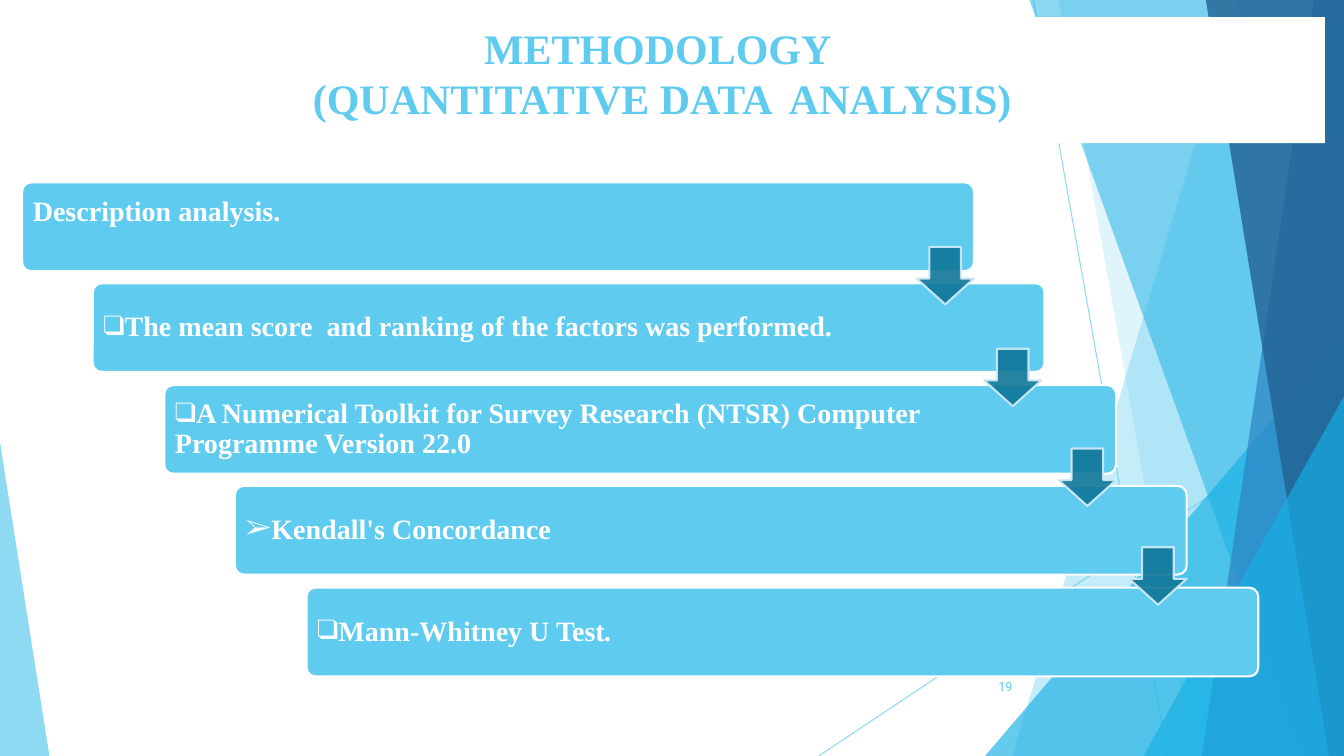
from dataclasses import dataclass

from pptx import Presentation
from pptx.dml.color import RGBColor
from pptx.enum.shapes import MSO_CONNECTOR as Link, MSO_SHAPE as Shape
from pptx.enum.text import MSO_ANCHOR as Anchor, MSO_AUTO_SIZE as Fit, PP_ALIGN as Align
from pptx.oxml.ns import qn
from pptx.oxml.xmlchemy import OxmlElement
from pptx.util import Pt

PX = 9144  # 100 px to the inch


@dataclass(frozen=True)
class Theme:
    sky: str = "5FCBEF"
    cyan: str = "17B0E4"
    blue: str = "2E83C3"
    navy: str = "226292"
    teal: str = "0F7698"
    pale: str = "D2ECF9"
    white: str = "FFFFFF"
    serif: str = "Times New Roman"
    sans: str = "Roboto"
    head: int = 30
    body: int = 20
    small: int = 9


T = Theme()

TITLE = ["METHODOLOGY ", "(QUANTITATIVE DATA  ANALYSIS)"]
STEPS = [  # bullet, runs as (text, italic)
    ("", [("Description analysis.", False)]),
    ("❑", [("The mean score  and ranking of the factors was performed.", False)]),
    ("❑", [("A Numerical Toolkit for Survey Research (NTSR) Computer "
            "Programme Version 22.0", False)]),
    ("➢", [("Kendall's Concordance", False)]),
    ("❑", [("Mann-Whitney U Test", False), (".", True)]),
]
ARROWS = [(909, 245), (976, 346), (1050, 445), (1120, 543)]
PAGE = "19"

RAYS = [(1025, 0, 1158, 750), (1333, 403, 812, 750)]
# Back to front: a list of corners, or a triangle's box with its apex
FACETS = [
    ([(1228, 0), (1333, 0), (1333, 750), (1004, 750)], None, T.sky, 36),
    ([(1050, 0), (1333, 0), (1333, 750), (1183, 750)], None, T.sky, 20),
    ((977, 333, 356, 417), 1, T.cyan, 66),
    ([(1021, 0), (1333, 0), (1333, 750), (1291, 750)], None, T.cyan, 50),
    ([(1303, 0), (1333, 0), (1333, 750), (1192, 750)], None, T.blue, 70),
    ([(1196, 0), (1333, 0), (1333, 750), (1318, 750)], None, T.navy, 80),
    ((1134, 393, 199, 357), 1, T.cyan, 66),
    ((0, 439, 49, 311), 0, T.sky, 70),
]


def emu(*lengths):
    return [n * PX for n in lengths]


def paint(fill, color, alpha=100):
    fill.solid()
    fill.fore_color.rgb = RGBColor.from_string(color)
    if alpha < 100:
        tint = OxmlElement("a:alpha")
        tint.set("val", str(alpha * 1000))
        fill._xPr.find(qn("a:solidFill"))[0].append(tint)


def style(shape, color, alpha=100, edge=None):
    shape.shadow.inherit = False
    paint(shape.fill, color, alpha)
    if edge:
        paint(shape.line.fill, edge, alpha)
        shape.line.width = Pt(1.5)
    else:
        shape.line.fill.background()


def write(para, text, size, color, face=T.serif, bold=True, italic=None):
    run = para.add_run()
    run.text = text
    font = run.font
    font.name, font.size, font.bold, font.italic = face, Pt(size), bold, italic
    font.color.rgb = RGBColor.from_string(color)


def set_bullet(para, mark):
    props = para._p.get_or_add_pPr()
    props.set("marL", "0")
    props.set("indent", "0")
    for tag, key, value in (("a:buFont", "typeface", T.serif), ("a:buChar", "char", mark)):
        part = OxmlElement(tag)
        part.set(key, value)
        props.append(part)


def add_rays(shapes):
    for ray in RAYS:
        line = shapes.add_connector(Link.STRAIGHT, *emu(*ray))
        paint(line.line.fill, T.sky, 70)
        line.line.width = Pt(0.75)
        line._element.spPr.append(OxmlElement("a:effectLst"))


def add_facets(shapes):
    for form, apex, color, alpha in FACETS:
        if apex is None:
            path = shapes.build_freeform(*form[0], scale=PX)
            path.add_line_segments(form[1:], close=True)
            facet = path.convert_to_shape()
        else:
            facet = shapes.add_shape(Shape.ISOSCELES_TRIANGLE, *emu(*form))
            facet.adjustments[0] = apex
        style(facet, color, alpha)


def add_title(shapes):
    title = shapes.title
    shapes._spTree.append(title._element)  # in front of the facets
    title.left, title.top, title.width, title.height = emu(0, 17, 1314, 125)
    paint(title.fill, T.white)
    frame = title.text_frame
    frame.auto_size = Fit.NONE
    frame.vertical_anchor = Anchor.TOP
    para = frame.paragraphs[0]
    para.alignment = Align.CENTER
    for i, text in enumerate(TITLE):
        if i:
            para.add_line_break()
        write(para, text, T.head, T.sky)


def add_steps(shapes):
    for i, (mark, runs) in enumerate(STEPS):
        left, top = 22 + i * 141 // 2, 181 + i * 201 // 2
        box = shapes.add_shape(Shape.ROUNDED_RECTANGLE, *emu(left, top, 944, 88))
        box.adjustments[0] = 0.1
        style(box, T.sky, edge=T.white)
        frame = box.text_frame
        frame.word_wrap = True
        frame.margin_left = frame.margin_top = frame.margin_bottom = 8 * PX
        frame.margin_right = 141 * PX
        frame.vertical_anchor = Anchor.MIDDLE if mark else Anchor.TOP
        para = frame.paragraphs[0]
        para.alignment = Align.LEFT
        if mark:
            para.line_spacing = 0.9
            set_bullet(para, mark)
        for text, italic in runs:
            write(para, text, T.body, T.white, italic=italic)


def add_arrows(shapes):
    for left, top in ARROWS:
        arrow = shapes.add_shape(Shape.DOWN_ARROW, *emu(left, top, 57, 57))
        arrow.adjustments[0], arrow.adjustments[1] = 0.55, 0.45
        style(arrow, T.teal, 90, T.pale)


def add_page(shapes):
    frame = shapes.add_textbox(*emu(939, 661, 75, 40)).text_frame
    frame.word_wrap = True
    frame.vertical_anchor = Anchor.MIDDLE
    para = frame.paragraphs[0]
    para.alignment = Align.RIGHT
    write(para, PAGE, T.small, T.sky, T.sans, bold=False)


def main():
    deck = Presentation()
    deck.slide_width, deck.slide_height = emu(1333, 750)
    shapes = deck.slides.add_slide(deck.slide_layouts[5]).shapes
    for add in (add_rays, add_facets, add_title, add_steps, add_arrows, add_page):
        add(shapes)
    deck.save("out.pptx")


if __name__ == "__main__":
    main()
